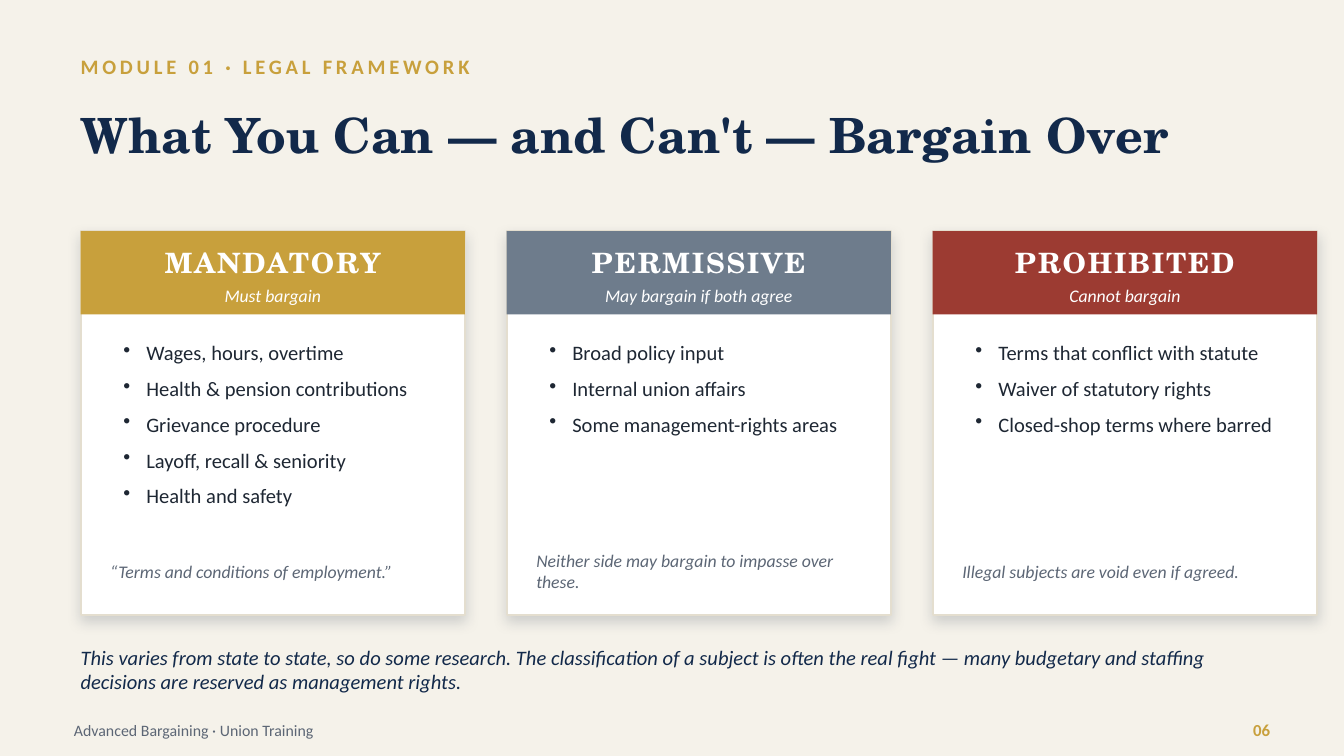
from dataclasses import dataclass

from lxml import etree
from pptx import Presentation
from pptx.dml.color import RGBColor
from pptx.enum import shapes, text
from pptx.oxml import ns
from pptx.util import Pt

COLORS = {
    "paper": "F5F2EA", "navy": "12294A", "gold": "C8A03C", "slate": "6E7C8C",
    "red": "9C3B32", "white": "FFFFFF", "border": "E4DECF", "ink": "1E2733",
    "grey": "5C6675", "shadow": "0C1D36",
}
SERIF, SANS = "TeX Gyre Schola", "Calibri"
LEFT, WIDTH = 43.2, 633.6
CARD_TOP, CARD_SIZE, CARD_PITCH, HEAD_H = 123.84, 205.92, 228.24, 44.64
INDENT = 12.24


@dataclass
class Card:
    title: str
    subtitle: str
    color: str
    items: list[str]
    note: str


CARDS = [
    Card("MANDATORY", "Must bargain", "gold",
         ["Wages, hours, overtime", "Health & pension contributions",
          "Grievance procedure", "Layoff, recall & seniority", "Health and safety"],
         "“Terms and conditions of employment.”"),
    Card("PERMISSIVE", "May bargain if both agree", "slate",
         ["Broad policy input", "Internal union affairs", "Some management-rights areas"],
         "Neither side may bargain to impasse over these."),
    Card("PROHIBITED", "Cannot bargain", "red",
         ["Terms that conflict with statute", "Waiver of statutory rights",
          "Closed-shop terms where barred"],
         "Illegal subjects are void even if agreed."),
]


def rgb(name: str) -> RGBColor:
    return RGBColor.from_string(COLORS[name])


def add_bullet(p) -> None:
    pPr = p._p.get_or_add_pPr()
    pPr.set("marL", str(Pt(INDENT)))
    pPr.set("indent", str(-Pt(INDENT)))
    etree.SubElement(pPr, ns.qn("a:buChar"), char="•")
    p.space_after = Pt(6)


def add_text(s, content: str | list[str], x: float, y: float, w: float, h: float, *,
             size: float, color: str, font: str = SANS, bold: bool = False,
             italic: bool = False, spacing: float = 0, align: str = "LEFT",
             bullets: bool = False) -> None:
    tf = s.shapes.add_textbox(Pt(x), Pt(y), Pt(w), Pt(h)).text_frame
    tf.word_wrap = True
    if not bullets:
        tf.vertical_anchor = text.MSO_ANCHOR.MIDDLE
        tf.margin_left = tf.margin_right = tf.margin_top = tf.margin_bottom = 0
    lines = [content] if isinstance(content, str) else content
    for i, line in enumerate(lines):
        p = tf.add_paragraph() if i else tf.paragraphs[0]
        if bullets:
            add_bullet(p)
        p.alignment = text.PP_ALIGN[align]
        r = p.add_run()
        r.text = line
        r.font.name, r.font.size = font, Pt(size)
        r.font.bold, r.font.italic = bold, italic
        r.font.color.rgb = rgb(color)
        if spacing:
            r._r.get_or_add_rPr().set("spc", str(int(spacing * 100)))


def add_rect(s, x: float, y: float, w: float, h: float, fill: str,
             line: str | None = None, shadow: bool = False) -> None:
    sp = s.shapes.add_shape(shapes.MSO_SHAPE.RECTANGLE, Pt(x), Pt(y), Pt(w), Pt(h))
    sp.fill.solid()
    sp.fill.fore_color.rgb = rgb(fill)
    if line:
        sp.line.color.rgb = rgb(line)
        sp.line.width = Pt(1)
    else:
        sp.line.fill.background()
    sp.shadow.inherit = False
    if shadow:
        effects = sp._element.spPr.find(ns.qn("a:effectLst"))
        outer = etree.SubElement(effects, ns.qn("a:outerShdw"), blurRad=str(Pt(7)),
                                 dist=str(Pt(3)), dir="5400000", algn="bl",
                                 rotWithShape="0")
        clr = etree.SubElement(outer, ns.qn("a:srgbClr"), val=COLORS["shadow"])
        etree.SubElement(clr, ns.qn("a:alpha"), val="16000")


def add_card(s, card: Card, x: float) -> None:
    # Panel and coloured header
    add_rect(s, x, CARD_TOP, CARD_SIZE, CARD_SIZE, "white", line="border", shadow=True)
    add_rect(s, x, CARD_TOP, CARD_SIZE, HEAD_H, card.color)
    add_text(s, card.title, x, 129.6, CARD_SIZE, 21.6, size=15, color="white",
             font=SERIF, bold=True, spacing=1, align="CENTER")
    add_text(s, card.subtitle, x, 149.76, CARD_SIZE, 17.28, size=9.5, color="white",
             italic=True, align="CENTER")
    # Bullets and closing note
    add_text(s, card.items, x + 15.84, 178.56, 177.12, 111.6, size=11, color="ink",
             bullets=True)
    add_text(s, card.note, x + 15.84, 288, 174.24, 36, size=9.5, color="grey", italic=True)


def main() -> None:
    prs = Presentation()
    prs.slide_width, prs.slide_height = Pt(720), Pt(405)
    s = prs.slides.add_slide(prs.slide_layouts[6])
    s.background.fill.solid()
    s.background.fill.fore_color.rgb = rgb("paper")

    # Heading
    add_text(s, "MODULE 01 · LEGAL FRAMEWORK", LEFT, 24.48, WIDTH, 21.6 + 0,
             size=11, color="gold", bold=True, spacing=2)
    add_text(s, "What You Can — and Can't — Bargain Over", LEFT, 44.64, WIDTH, 54,
             size=26, color="navy", font=SERIF, bold=True)

    # Three categories
    for i, card in enumerate(CARDS):
        add_card(s, card, LEFT + i * CARD_PITCH)

    # Takeaway and footer
    add_text(s, "This varies from state to state, so do some research. The classification "
             "of a subject is often the real fight — many budgetary and staffing decisions "
             "are reserved as management rights.", LEFT, 344.16, WIDTH, 28.8,
             size=11, color="navy", italic=True)
    add_text(s, "Advanced Bargaining · Union Training", 39.6, 380.16, 468, 21.6,
             size=8.5, color="grey")
    add_text(s, "06", 648, 380.16, 32.4, 21.6, size=9, color="gold", bold=True,
             align="RIGHT")

    prs.save("out.pptx")


if __name__ == "__main__":
    main()
